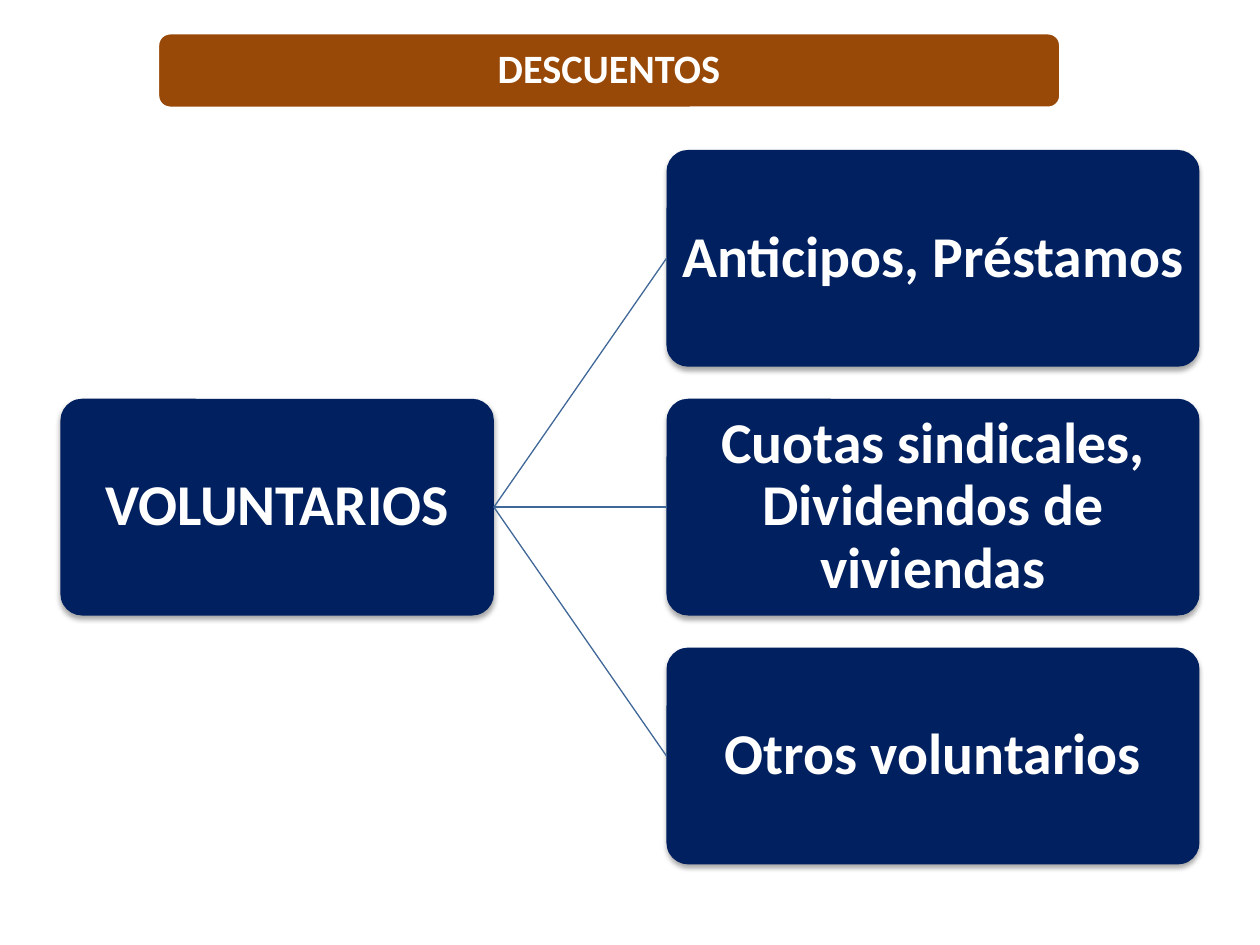
from lxml import etree
from pptx import Presentation
from pptx.dml.color import RGBColor as RGB
from pptx.enum.shapes import MSO_CONNECTOR as LINK, MSO_SHAPE as SHAPE
from pptx.enum.text import MSO_ANCHOR as ANCHOR, PP_ALIGN as ALIGN
from pptx.oxml import parse_xml
from pptx.oxml.ns import nsdecls, qn
from pptx.util import Inches, Pt

COLORS = {"title": "984807", "box": "002060", "link": "3F6797", "white": "FFFFFF"}
SHADOW = (
    f'<a:outerShdw {nsdecls("a")} blurRad="{Pt(3.1)}" dist="{Pt(1.8)}" '
    'dir="5400000" rotWithShape="0"><a:srgbClr val="000000">'
    '<a:alpha val="35000"/></a:srgbClr></a:outerShdw>'
)


def color(name):
    return RGB.from_string(COLORS[name])


def add_box(text, left, top, width, height, fill, size, inset):
    """Add a rounded box with bold centred text and no shadow."""
    box = slide.shapes.add_shape(
        SHAPE.ROUNDED_RECTANGLE,
        Inches(left), Inches(top), Inches(width), Inches(height))
    box.shadow.inherit = False
    box.fill.solid()
    box.fill.fore_color.rgb = color(fill)
    box.line.fill.background()
    frame = box.text_frame
    frame.word_wrap = True
    frame.vertical_anchor = ANCHOR.MIDDLE
    for side in ("left", "right", "top", "bottom"):
        setattr(frame, f"margin_{side}", Inches(inset))
    para = frame.paragraphs[0]
    para.alignment = ALIGN.CENTER
    para.line_spacing = 0.9
    run = para.add_run()
    run.text = text
    for key, value in {"name": "Calibri", "size": Pt(size), "bold": True}.items():
        setattr(run.font, key, value)
    run.font.color.rgb = color("white")
    return box


deck = Presentation()
deck.slide_width, deck.slide_height = Inches(10), Inches(7.5)
slide = deck.slides.add_slide(deck.slide_layouts[6])

title = add_box("DESCUENTOS", 1.25, 0.26, 7.17, 0.6, "title", 23, 0.13)
title.line.color.rgb = color("white")
title.line.width = Pt(2)

# One root on the left, three equally spaced items on the right
top, step, height = 1.19, 1.975, 1.72
items = ["Anticipos, Préstamos", "Cuotas sindicales, Dividendos de viviendas",
         "Otros voluntarios"]
root = add_box("VOLUNTARIOS", 0.48, top + step, 3.44, height, "box", 33, 0.07)
boxes = [root]
for row, text in enumerate(items):
    boxes.append(add_box(text, 5.29, top + row * step, 4.23, height, "box", 33, 0.07))

for box in boxes:
    box.adjustments[0] = 0.1
    box.element.spPr.find(qn("a:effectLst")).append(parse_xml(SHADOW))

# Connection sites of a rounded box: 1 is the left side, 3 the right
for item in boxes[1:]:
    link = slide.shapes.add_connector(LINK.STRAIGHT, 0, 0, 0, 0)
    link.begin_connect(root, 3)
    link.end_connect(item, 1)
    link.line.color.rgb = color("link")
    link.line.width = Pt(0.75)
    etree.SubElement(link.element.spPr, qn("a:effectLst"))

deck.save("out.pptx")
